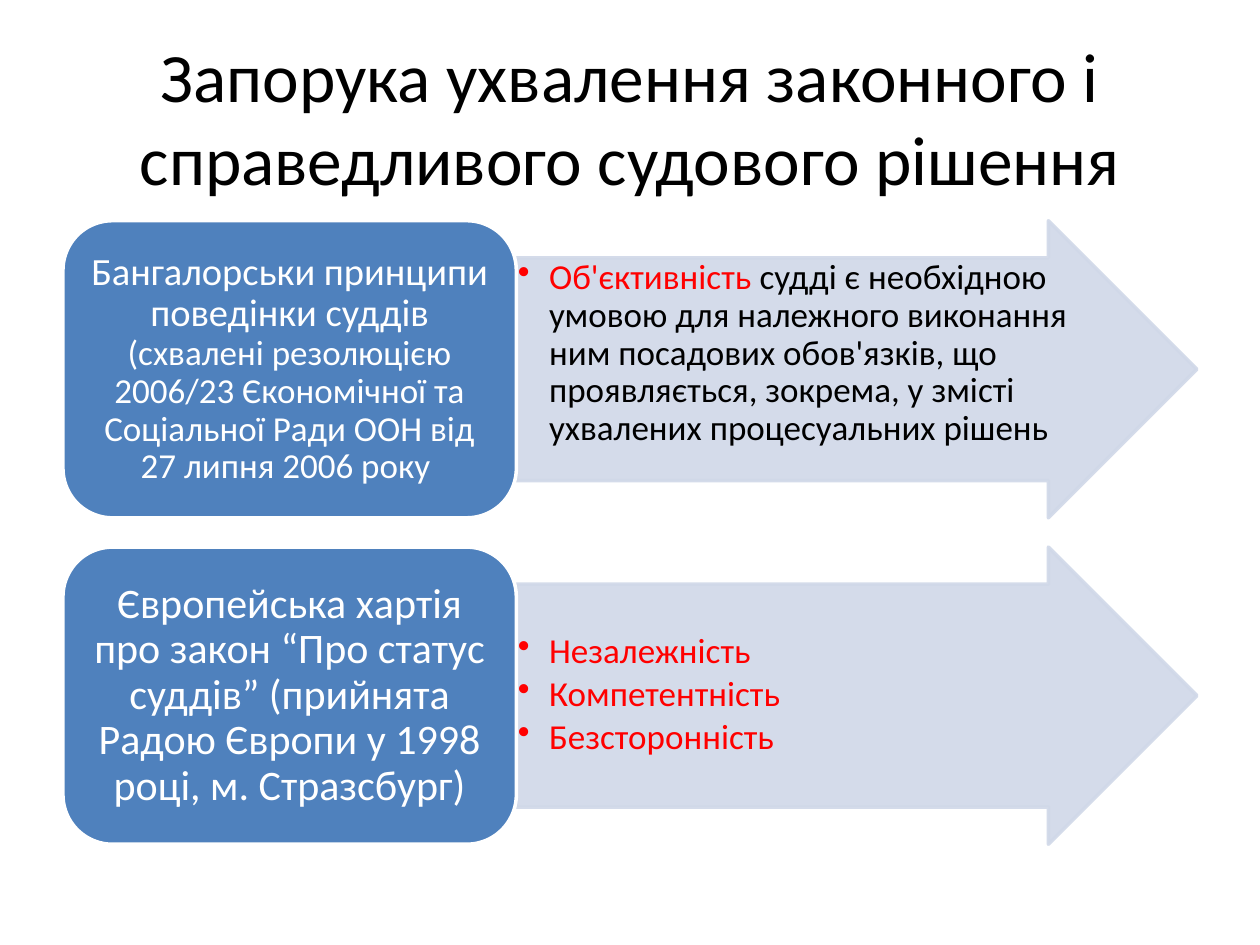
from dataclasses import dataclass

import pptx
import pptx.dml.color
import pptx.enum.shapes
import pptx.enum.text
import pptx.oxml
import pptx.oxml.ns
import pptx.util
from pptx.util import Cm, Pt

ALIGN = pptx.enum.text.PP_ALIGN
ANCHOR = pptx.enum.text.MSO_ANCHOR
SHAPE = pptx.enum.shapes.MSO_SHAPE


@dataclass(frozen=True)
class Theme:
    font: str = "Calibri"
    black: str = "000000"
    white: str = "FFFFFF"
    accent: str = "FF0000"
    source_fill: str = "4F81BD"
    arrow_fill: str = "D0D8E8"
    arrow_opacity: int = 90
    title_size: float = 39.6
    large_size: float = 24
    medium_size: float = 22
    body_size: float = 20
    line_width: float = 2


THEME = Theme()


@dataclass(frozen=True)
class Span:
    text: str
    size: float
    color: str


@dataclass(frozen=True)
class Row:
    """One source of law and the qualities it asks of a judge."""
    source: list[Span]
    qualities: list[list[Span]]
    arrow_top_margin: float


ROWS = [
    Row(
        [Span("Бангалорськи принципи поведінки суддів ", THEME.medium_size, THEME.white),
         Span("(схвалені резолюцією 2006/23 Єкономічної та Соціальної Ради ООН "
              "від 27 липня 2006 року ", THEME.body_size, THEME.white)],
        [[Span("Об'єктивність ", THEME.body_size, THEME.accent),
          Span("судді є необхідною умовою для належного виконання ним посадових "
               "обов'язків, що проявляється, зокрема, у змісті ухвалених "
               "процесуальних рішень", THEME.body_size, THEME.black)]],
        0.03,
    ),
    Row(
        [Span("Європейська хартія про закон “Про статус суддів” (прийнята Радою "
              "Європи у 1998 році, м. Стразсбург)", THEME.large_size, THEME.white)],
        [[Span(word, THEME.body_size, THEME.accent)]
         for word in ("Незалежність", "Компетентність", "Безсторонність")],
        0.99,
    ),
]

LEFT, TOP, ROW_STEP, ROW_HEIGHT = 1.27, 4.45, 6.58, 5.99
SOURCE_WIDTH, ARROW_WIDTH = 9.14, 13.72


def rgb(color: str) -> pptx.dml.color.RGBColor:
    return pptx.dml.color.RGBColor.from_string(color)


def apply_format(target, values: dict) -> None:
    for name, value in values.items():
        setattr(target, name, value)


def add_spans(para, spans: list[Span]) -> None:
    for span in spans:
        run = para.add_run()
        run.text = span.text
        apply_format(run.font, {"name": THEME.font, "size": Pt(span.size)})
        run.font.color.rgb = rgb(span.color)


def add_bullet(para) -> None:
    properties = para._p.get_or_add_pPr()
    properties.set("marL", str(Cm(0.63)))
    properties.set("indent", str(-Cm(0.63)))
    bullet = pptx.oxml.parse_xml(
        f'<a:buChar {pptx.oxml.ns.nsdecls("a")} char="•"/>')
    properties.append(bullet)


def set_opacity(shape, percent: int) -> None:
    """Make the fill and the outline equally see-through."""
    for color in shape._element.spPr.iter(pptx.oxml.ns.qn("a:srgbClr")):
        color.append(pptx.oxml.parse_xml(
            f'<a:alpha {pptx.oxml.ns.nsdecls("a")} val="{percent * 1000}"/>'))


def add_block(page, kind, left: float, top: float, width: float,
              fill: str, line: str):
    block = page.shapes.add_shape(kind, Cm(left), Cm(top), Cm(width), Cm(ROW_HEIGHT))
    block.shadow.inherit = False
    block.fill.solid()
    block.fill.fore_color.rgb = rgb(fill)
    block.line.color.rgb = rgb(line)
    block.line.width = Pt(THEME.line_width)
    block.text_frame.word_wrap = True
    return block


def add_arrow(page, row: Row, top: float) -> None:
    arrow = add_block(page, SHAPE.RIGHT_ARROW, LEFT + SOURCE_WIDTH, top, ARROW_WIDTH,
                      THEME.arrow_fill, THEME.arrow_fill)
    arrow.adjustments[0], arrow.adjustments[1] = 0.75, 0.5
    set_opacity(arrow, THEME.arrow_opacity)
    frame = arrow.text_frame
    apply_format(frame, {
        "vertical_anchor": ANCHOR.TOP, "margin_left": Cm(0.03),
        "margin_right": Cm(0.03), "margin_bottom": Cm(0.03),
        "margin_top": Cm(row.arrow_top_margin),
    })
    for index, spans in enumerate(row.qualities):
        para = frame.add_paragraph() if index else frame.paragraphs[0]
        apply_format(para, {"level": 1, "alignment": ALIGN.LEFT,
                            "line_spacing": 0.9, "space_after": Pt(3)})
        add_bullet(para)
        add_spans(para, spans)


def add_source(page, row: Row, top: float) -> None:
    box = add_block(page, SHAPE.ROUNDED_RECTANGLE, LEFT, top, SOURCE_WIDTH,
                    THEME.source_fill, THEME.white)
    apply_format(box.text_frame, {
        "vertical_anchor": ANCHOR.MIDDLE, "margin_left": Cm(0.23),
        "margin_right": Cm(0.23), "margin_top": Cm(0.12), "margin_bottom": Cm(0.12),
    })
    para = box.text_frame.paragraphs[0]
    apply_format(para, {"alignment": ALIGN.CENTER, "line_spacing": 0.9})
    add_spans(para, row.source)


def add_title(page, text: str) -> None:
    title = page.shapes.title
    apply_format(title, {"left": Cm(1.27), "top": Cm(0.76),
                         "width": Cm(22.86), "height": Cm(3.18)})
    apply_format(title.text_frame, {
        "word_wrap": True, "vertical_anchor": ANCHOR.MIDDLE,
        "auto_size": pptx.enum.text.MSO_AUTO_SIZE.NONE,
    })
    para = title.text_frame.paragraphs[0]
    para.alignment = ALIGN.CENTER
    add_spans(para, [Span(text, THEME.title_size, THEME.black)])


def main() -> None:
    deck = pptx.Presentation()
    apply_format(deck, {"slide_width": Cm(25.4), "slide_height": Cm(19.05)})
    title_only = deck.slide_layouts[5]
    page = deck.slides.add_slide(title_only)
    add_title(page, "Запорука ухвалення законного і справедливого судового рішення")
    for index, row in enumerate(ROWS):
        top = TOP + index * ROW_STEP
        add_arrow(page, row, top)
        add_source(page, row, top)
    deck.save("out.pptx")


if __name__ == "__main__":
    main()
